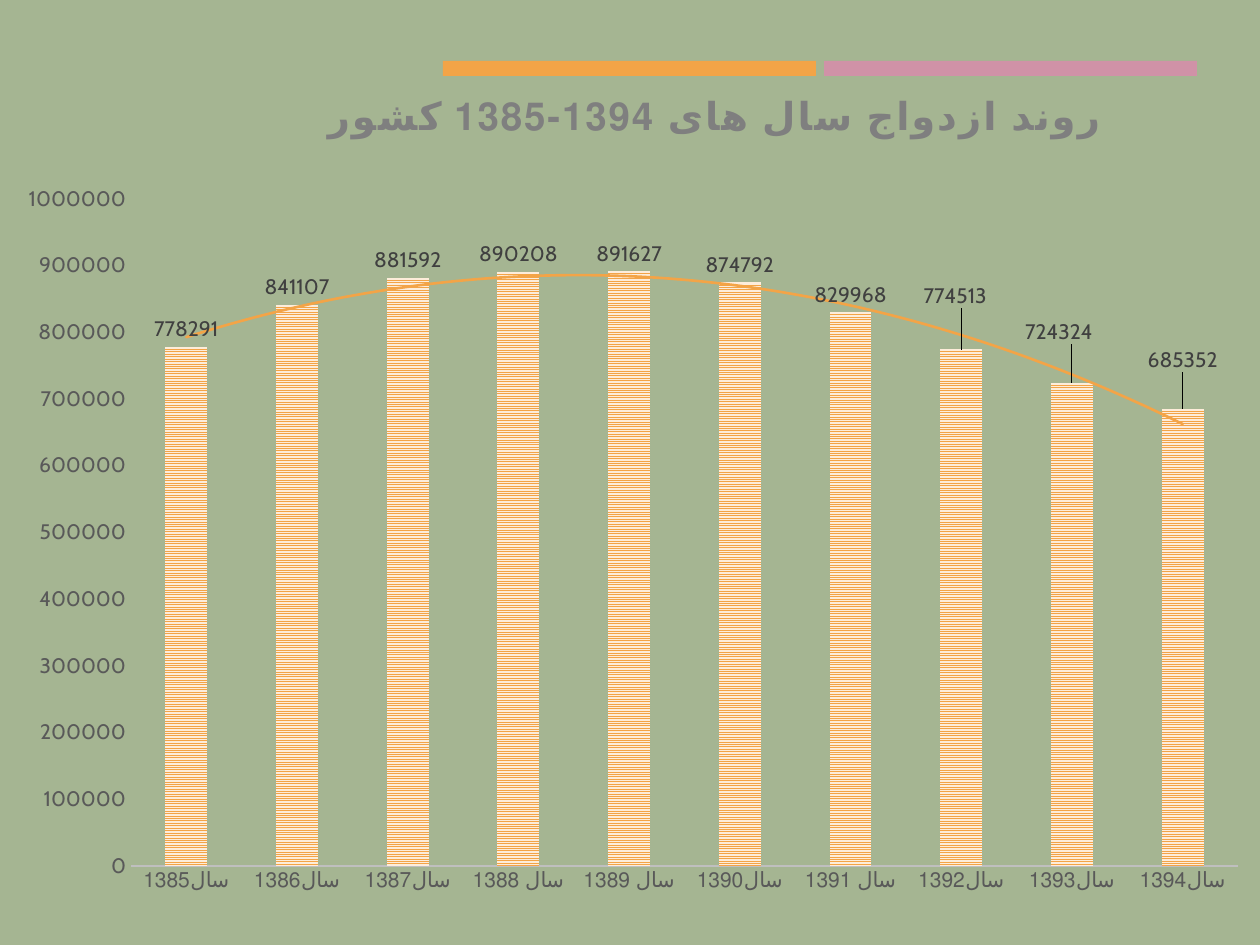
import pptx
import pptx.chart.data
import pptx.dml.color
import pptx.enum.chart
import pptx.enum.dml
import pptx.enum.shapes
import pptx.oxml
import pptx.oxml.ns
import pptx.util

RGB = pptx.dml.color.RGBColor
SAGE = RGB(0xA5, 0xB5, 0x92)
PINK = RGB(0xD0, 0x92, 0xA7)
AMBER = RGB(0xF3, 0xA4, 0x47)
CREAM = RGB(0xFD, 0xED, 0xDA)
GREY = RGB(0x7F, 0x7F, 0x7F)
SLATE = RGB(0x59, 0x59, 0x59)
DARK = RGB(0x40, 0x40, 0x40)
SILVER = RGB(0xBF, 0xBF, 0xBF)
FACE = "Cabin"
SCALE = 914400 / 126

TITLE = "روند ازدواج سال های 1394-1385 کشور"
YEARS = ["سال1385", "سال1386", "سال1387", "سال 1388", "سال 1389",
         "سال1390", "سال 1391", "سال1392", "سال1393", "سال1394"]
COUNTS = [778291, 841107, 881592, 890208, 891627,
          874792, 829968, 774513, 724324, 685352]
# Label shifts by point, in px
SHIFTS = {7: (-6, -36), 8: (-13, -33), 9: (0, -31)}
CHART = (4, 86, 1260, 824)


def px(n):
    return round(n * SCALE)


def style(font, size, color):
    font.name = FACE
    font.size = pptx.util.Pt(size)
    font.color.rgb = color


def parse(tag, body):
    uri = pptx.oxml.ns.nsdecls("c", "a")
    return pptx.oxml.parse_xml(f"<c:{tag} {uri}>{body}</c:{tag}>")


def layout(x, y, size=None, inner=False):
    """Manual layout; px lengths become shares of the chart."""
    wide, high = CHART[2:]
    body = '<c:layoutTarget val="inner"/>' if inner else ""
    if size or inner:
        body += '<c:xMode val="edge"/><c:yMode val="edge"/>'
    vals = [("x", x / wide), ("y", y / high)]
    if inner:
        vals += [("w", size[0] / wide), ("h", size[1] / high)]
    body += "".join(f'<c:{k} val="{v:.4f}"/>' for k, v in vals)
    return parse("layout", f"<c:manualLayout>{body}</c:manualLayout>")


def add_bar(slide, left, color):
    kind = pptx.enum.shapes.MSO_SHAPE.RECTANGLE
    bar = slide.shapes.add_shape(kind, px(left), px(61), px(373), px(15))
    bar.shadow.inherit = False
    bar.fill.solid()
    bar.fill.fore_color.rgb = color
    bar.line.fill.background()


def set_title(chart):
    para = chart.chart_title.text_frame.paragraphs[0]
    run = para.add_run()
    run.text = TITLE
    style(run.font, 22, GREY)
    run.font.bold = True
    run.font._element.set("spc", "120")
    para._p.get_or_add_pPr().set("rtl", "1")
    title = chart.chart_title._element
    for old in title.xpath("c:layout"):
        title.remove(old)
    title.xpath("c:tx")[0].addnext(layout(317, 3, size=(790, 50)))


def set_axes(chart):
    none = pptx.enum.chart.XL_TICK_MARK.NONE
    for axis in (chart.category_axis, chart.value_axis):
        axis.major_tick_mark = axis.minor_tick_mark = none
        axis.has_major_gridlines = False
        style(axis.tick_labels.font, 12, SLATE)
    line = chart.category_axis.format.line
    line.color.rgb = SILVER
    line.width = pptx.util.Pt(1.5)
    axis = chart.value_axis
    axis.format.line.fill.background()
    axis.minimum_scale, axis.maximum_scale = 0, 1000000
    axis.major_unit = 100000


def set_labels(series):
    above = pptx.enum.chart.XL_LABEL_POSITION.OUTSIDE_END
    labels = series.data_labels
    labels.show_value = True
    labels.position = above
    style(labels.font, 12, DARK)
    for i, (dx, dy) in SHIFTS.items():
        label = series.points[i].data_label
        label.position = above
        style(label.font, 12, DARK)
        idx = series._element.xpath(f"c:dLbls/c:dLbl/c:idx[@val='{i}']")[0]
        idx.addnext(layout(dx, dy))


def add_trend(series):
    trend = parse("trendline", f"""
        <c:spPr><a:ln w="19050" cap="rnd"><a:solidFill>
        <a:srgbClr val="{AMBER}"/></a:solidFill></a:ln></c:spPr>
        <c:trendlineType val="poly"/><c:order val="2"/>
        <c:dispRSqr val="0"/><c:dispEq val="0"/>""")
    series._element.xpath("c:dLbls")[0].addnext(trend)


def add_chart(slide):
    data = pptx.chart.data.CategoryChartData()
    data.categories = YEARS
    data.add_series("Series 1", COUNTS)
    kind = pptx.enum.chart.XL_CHART_TYPE.COLUMN_CLUSTERED
    chart = slide.shapes.add_chart(kind, *map(px, CHART), data).chart
    chart.has_legend = False
    style(chart.font, 10, RGB(0, 0, 0))
    set_title(chart)
    set_axes(chart)

    # Striped columns
    plot = chart.plots[0]
    plot.gap_width, plot.overlap = 164, -22
    plot.vary_by_categories = False
    series = plot.series[0]
    fill = series.format.fill
    fill.patterned()
    fill.pattern = pptx.enum.dml.MSO_PATTERN.NARROW_HORIZONTAL
    fill.fore_color.rgb = AMBER
    fill.back_color.rgb = CREAM
    series.format.line.fill.background()
    set_labels(series)
    add_trend(series)

    # Plot area
    area = chart._chartSpace.xpath("c:chart/c:plotArea")[0]
    for old in area.xpath("c:layout"):
        area.remove(old)
    area.insert(0, layout(127, 113, size=(1107, 667), inner=True))


def main():
    deck = pptx.Presentation()
    deck.slide_width, deck.slide_height = px(1260), px(945)
    slide = deck.slides.add_slide(deck.slide_layouts[6])
    slide.background.fill.solid()
    slide.background.fill.fore_color.rgb = SAGE
    # Accent bars
    for left, color in ((824, PINK), (443, AMBER)):
        add_bar(slide, left, color)
    add_chart(slide)
    deck.save("out.pptx")


if __name__ == "__main__":
    main()
